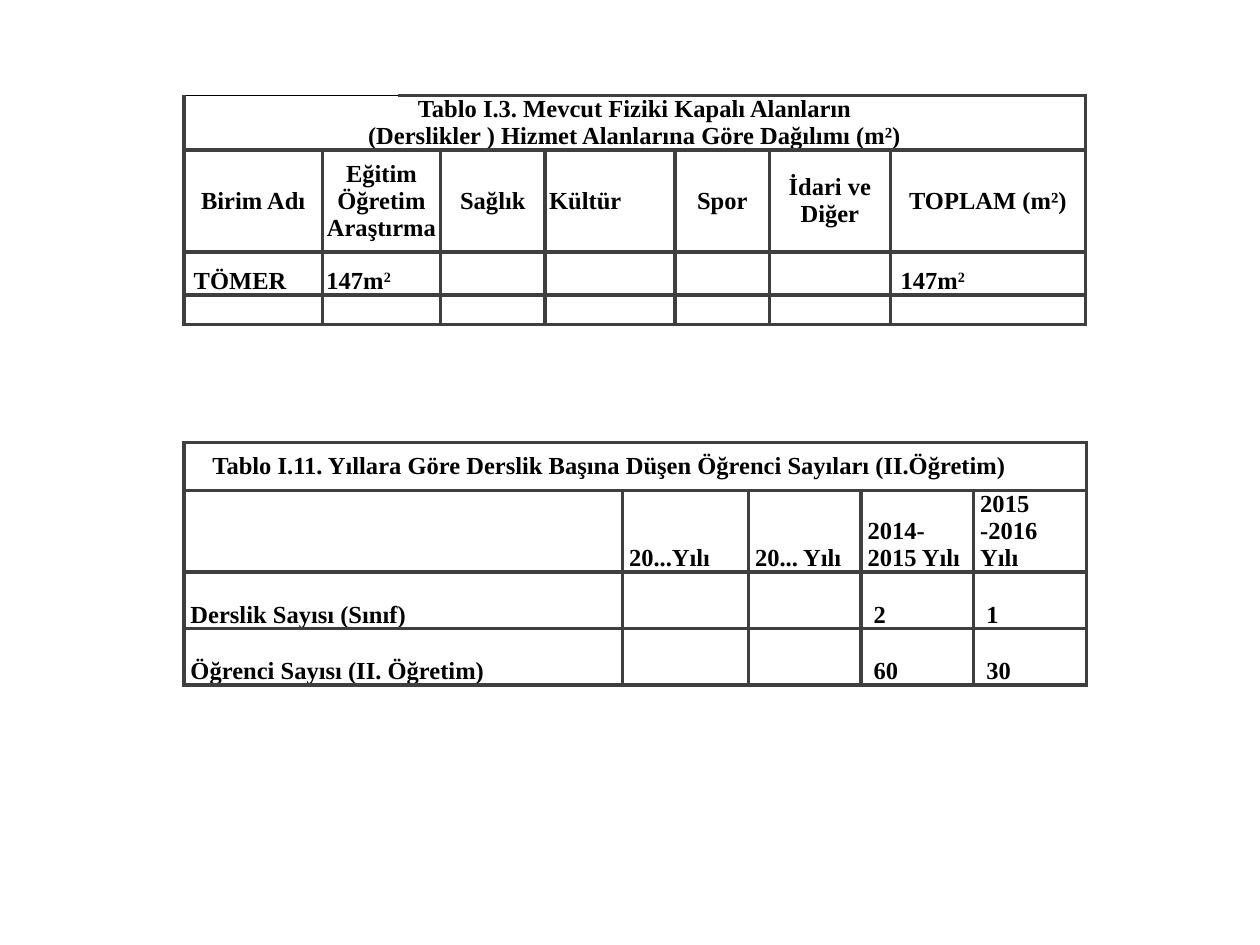
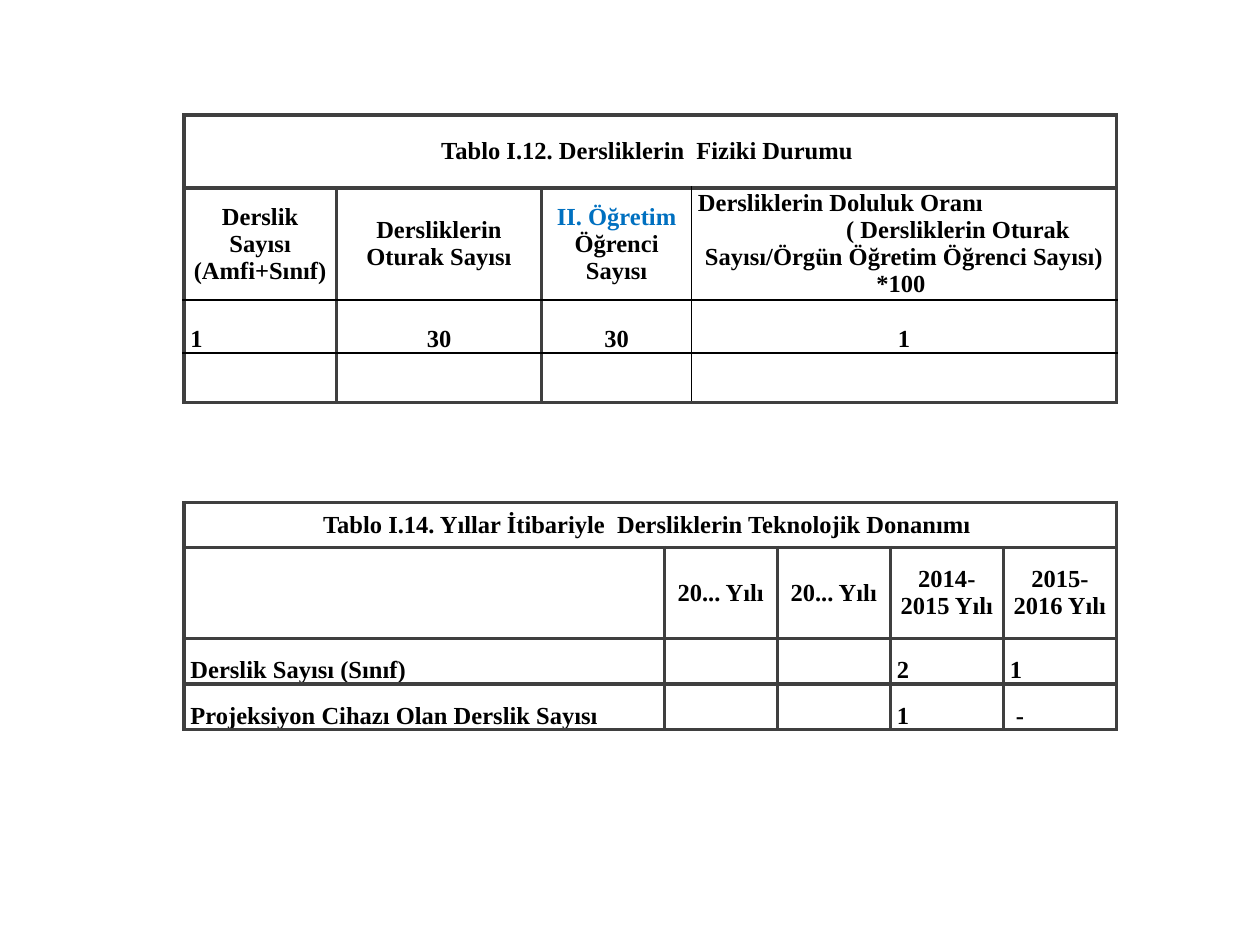
from dataclasses import dataclass
from typing import Optional, Union

from lxml import etree
from pptx import Presentation
from pptx.dml.color import RGBColor
from pptx.enum import text as t
from pptx.oxml import ns
from pptx.util import Cm, Pt

COLORS = {"grid": "3F3F3F", "ink": "000000", "paper": "FFFFFF", "accent": "0070C0"}
FONT = "Times New Roman"
SIZE = Pt(14)
LEFT = Cm(3.71)
THICK = ("grid", Pt(2.25))
THIN = ("ink", Pt(1))
LEFT_ALIGN, CENTER = t.PP_ALIGN.LEFT, t.PP_ALIGN.CENTER
MIDDLE, BOTTOM = t.MSO_ANCHOR.MIDDLE, t.MSO_ANCHOR.BOTTOM


@dataclass(frozen=True)
class Span:
    text: str
    color: str = "ink"
    raised: bool = False


@dataclass(frozen=True)
class Line:
    spans: tuple
    align: Optional[t.PP_ALIGN] = None
    indent: float = 0


@dataclass(frozen=True)
class Entry:
    lines: tuple
    span: int = 1
    align: Optional[t.PP_ALIGN] = None
    pad_right: float = 0


@dataclass(frozen=True)
class Row:
    height: float
    entries: list[Union[str, Entry]]
    anchor: t.MSO_ANCHOR = BOTTOM
    align: t.PP_ALIGN = LEFT_ALIGN
    bare: bool = False


@dataclass(frozen=True)
class Sheet:
    """A table; thin holds (axis, grid line, place along it) of its thin edges."""
    top: float
    widths: list[float]
    rows: list[Row]
    inset: float = 0.13
    thin: frozenset = frozenset()


def wide(text: str, span: int, **options) -> Entry:
    return Entry((Line((Span(text),)),), span, **options)


def heading(height: float, *entries: Union[str, Entry]) -> Row:
    return Row(height, list(entries), MIDDLE, CENTER)


def area(prefix: str, span: int = 1) -> Entry:
    return Entry((Line((Span(prefix), Span("2", raised=True))),), span)


CLOSED_AREAS = Sheet(
    top=0,
    widths=[2.79, 1.52, 0.86, 2.11, 2.62, 1.9, 2.44, 3.93],
    inset=0.08,
    thin=frozenset(("row", 1, col) for col in range(2)),
    rows=[
        Row(1.93, [wide("", 2), wide("", 6)], bare=True),
        heading(1.02, Entry((
            Line((Span("Tablo I.3. Mevcut Fiziki Kapalı Alanların"),)),
            Line((Span("(Derslikler ) Hizmet Alanlarına Göre Dağılımı (m²)"),)),
        ), 8)),
        heading(2.06, "Birim Adı", wide("Eğitim Öğretim Araştırma", 2), "Sağlık",
                wide("Kültür", 1, align=LEFT_ALIGN), "Spor", "İdari ve Diğer",
                "TOPLAM (m²)"),
        Row(0.86, [" TÖMER", area("147m", 2), "", "", "", "", area(" 147m")]),
        Row(0.51, ["", wide("", 2), "", "", "", "", ""]),
    ],
)

STUDENTS_PER_ROOM = Sheet(
    top=8.92,
    widths=[8.84, 2.54] + [2.27] * 3,
    rows=[
        heading(0.97, wide("Tablo I.11. Yıllara Göre Derslik Başına Düşen Öğrenci "
                           "Sayıları (II.Öğretim)", 5, pad_right=1.04)),
        Row(1.35, ["", "20...Yılı", "20... Yılı", "2014-2015 Yılı", "2015 -2016 Yılı"]),
        Row(1.14, ["Derslik Sayısı (Sınıf)", "", "", " 2", " 1"]),
        Row(1.14, ["Öğrenci Sayısı (II. Öğretim)", "", "", " 60", " 30"]),
    ],
)

ROOM_CONDITION = Sheet(
    top=2.32,
    widths=[3.07, 4.14, 3.02, 8.57],
    thin=frozenset(
        [("row", line, col) for line in (2, 3) for col in range(4)]
        + [("col", 3, row) for row in (1, 2, 3)]),
    rows=[
        heading(1.47, wide("Tablo I.12. Dersliklerin  Fiziki Durumu ", 4)),
        heading(2.26, "Derslik Sayısı (Amfi+Sınıf)", "Dersliklerin Oturak Sayısı",
                Entry((Line((Span("II. Öğretim", "accent"), Span(" Öğrenci Sayısı"))),)),
                Entry((
                    Line((Span("Dersliklerin Doluluk Oranı"),), LEFT_ALIGN),
                    Line((Span("( Dersliklerin Oturak"),), indent=2.18),
                    Line((Span("Sayısı/Örgün Öğretim Öğrenci Sayısı) *100 "),)),
                ))),
        Row(1.07, [wide("1", 1, align=LEFT_ALIGN), "30", "30", "1"], align=CENTER),
        Row(0.99, [""] * 4),
    ],
)

ROOM_EQUIPMENT = Sheet(
    top=10.13,
    widths=[9.68] + [2.28] * 4,
    rows=[
        heading(0.91, wide("Tablo I.14. Yıllar İtibariyle  Dersliklerin Teknolojik "
                           "Donanımı ", 5)),
        heading(1.83, "", "20... Yılı", "20... Yılı", "2014-2015 Yılı", "2015-2016 Yılı"),
        Row(0.92, ["Derslik Sayısı (Sınıf)", "", "", "2", "1"]),
        Row(0.92, ["Projeksiyon Cihazı Olan Derslik Sayısı", "", "", "1", " -"]),
    ],
)

PAGES = [(CLOSED_AREAS, STUDENTS_PER_ROOM), (ROOM_CONDITION, ROOM_EQUIPMENT)]


def draw_edges(cell, sheet: Sheet, row: int, col: int) -> None:
    properties = cell._tc.get_or_add_tcPr()
    sides = {"lnL": ("col", col, row), "lnR": ("col", col + 1, row),
             "lnT": ("row", row, col), "lnB": ("row", row + 1, col)}
    for place, (tag, edge) in enumerate(sides.items()):
        color, width = THIN if edge in sheet.thin else THICK
        line = etree.Element(ns.qn(f"a:{tag}"), w=str(int(width)))
        if sheet.rows[row].bare and tag != "lnB":
            etree.SubElement(line, ns.qn("a:noFill"))
        else:
            fill = etree.SubElement(line, ns.qn("a:solidFill"))
            etree.SubElement(fill, ns.qn("a:srgbClr"), val=COLORS[color])
        properties.insert(place, line)


def write_line(para, line: Line, align: t.PP_ALIGN) -> None:
    para.alignment = line.align or align
    if line.indent:
        para._p.get_or_add_pPr().set("marL", str(int(Cm(line.indent))))
    for part in line.spans:
        if not part.text:
            etree.SubElement(para._p, ns.qn("a:endParaRPr"), sz=str(int(SIZE.pt * 100)))
            continue
        span = para.add_run()
        span.text = part.text
        span.font.name, span.font.size, span.font.bold = FONT, SIZE, True
        span.font.color.rgb = RGBColor.from_string(COLORS[part.color])
        if part.raised:
            span.font._element.set("baseline", "30000")


def write_entry(cell, entry: Entry, row: Row, inset: float) -> None:
    cell.vertical_anchor = row.anchor
    cell.margin_left = Cm(inset)
    cell.margin_right = Cm(inset + entry.pad_right)
    cell.margin_top = cell.margin_bottom = 0
    frame = cell.text_frame
    for number, line in enumerate(entry.lines):
        para = frame.add_paragraph() if number else frame.paragraphs[0]
        write_line(para, line, entry.align or row.align)


def draw_sheet(page, sheet: Sheet) -> None:
    table = page.shapes.add_table(
        len(sheet.rows), len(sheet.widths), LEFT, Cm(sheet.top),
        Cm(sum(sheet.widths)), Cm(sum(row.height for row in sheet.rows))).table
    table.first_row = table.horz_banding = False
    for column, width in zip(table.columns, sheet.widths):
        column.width = Cm(width)
    for r, row in enumerate(sheet.rows):
        table.rows[r].height = Cm(row.height)
        for c in range(len(sheet.widths)):
            cell = table.cell(r, c)
            if row.bare:
                cell.fill.background()
            else:
                cell.fill.solid()
                cell.fill.fore_color.rgb = RGBColor.from_string(COLORS["paper"])
            draw_edges(cell, sheet, r, c)
        col = 0
        for item in row.entries:
            entry = wide(item, 1) if isinstance(item, str) else item
            cell = table.cell(r, col)
            if entry.span > 1:
                cell.merge(table.cell(r, col + entry.span - 1))
            write_entry(cell, entry, row, sheet.inset)
            col += entry.span


def main() -> None:
    deck = Presentation()
    deck.slide_width, deck.slide_height = Cm(25.4), Cm(19.05)
    for sheets in PAGES:
        page = deck.slides.add_slide(deck.slide_layouts[6])
        for sheet in sheets:
            draw_sheet(page, sheet)
    deck.save("out.pptx")


if __name__ == "__main__":
    main()
